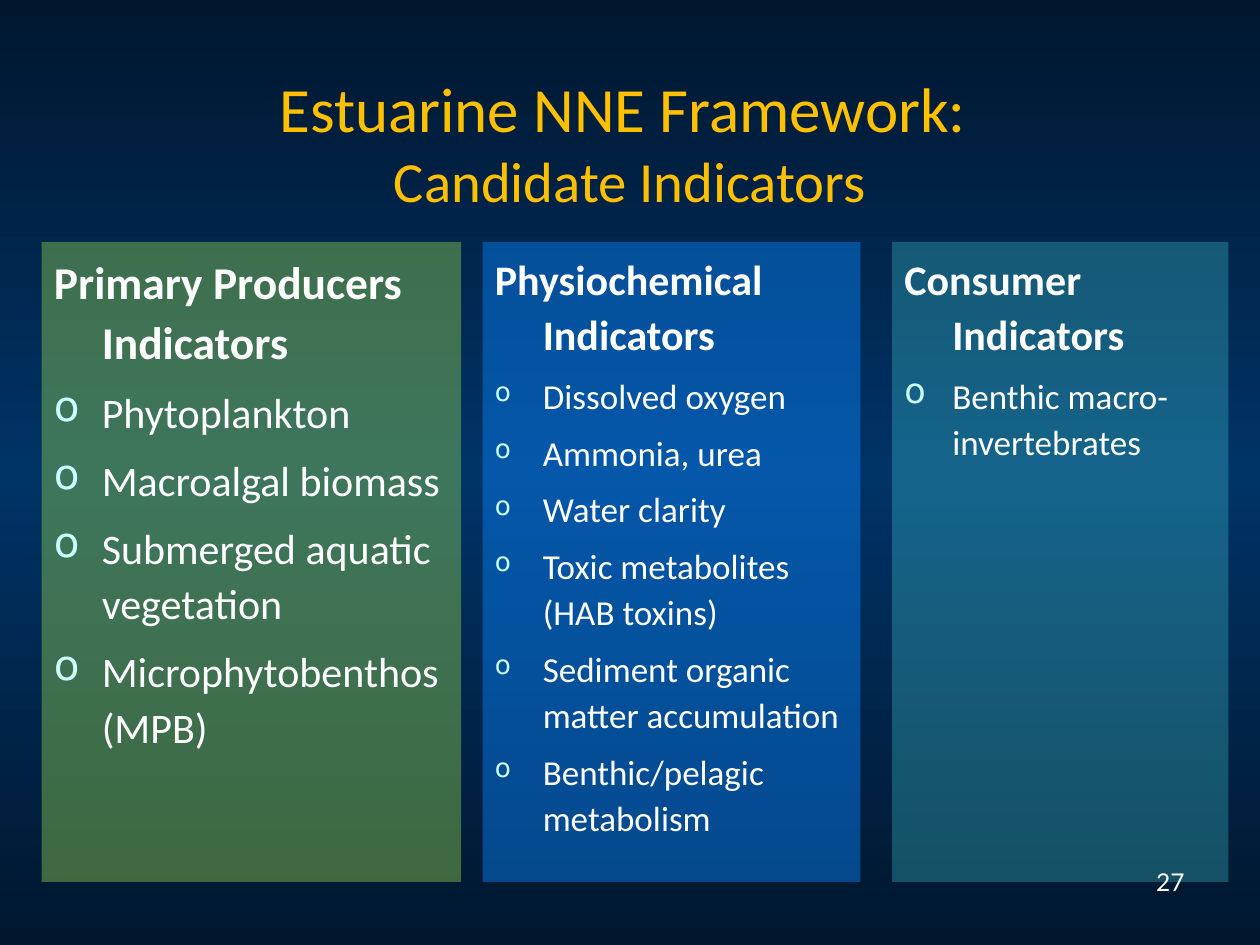
from copy import deepcopy

from lxml import etree
from pptx import Presentation, util as u
from pptx.dml.color import RGBColor
from pptx.enum import shapes, text
from pptx.oxml.ns import qn

WHITE = RGBColor(0xFF, 0xFF, 0xFF)
GOLD = RGBColor(0xFF, 0xC0, 0x00)
GREEN = RGBColor(0x92, 0xD0, 0x50)
BLUE = RGBColor(0x0A, 0x85, 0xFF)
CYAN = RGBColor(0x59, 0xFF, 0xFF)
BULLET = RGBColor(0xCC, 0xFF, 0xFF)
NIGHT = RGBColor(0x00, 0x17, 0x2E)
NAVY = RGBColor(0x00, 0x33, 0x66)


class Deck:
    """Holds the style and the current slide."""

    font = "Calibri"
    indent = u.Inches(0.38)
    top, height = u.Inches(1.92), u.Inches(5.08)

    def __init__(self, prs):
        self.s = prs.slides.add_slide(prs.slide_layouts[6])

    def background(self, edge, middle):
        fill = self.s.background.fill
        fill.gradient()
        fill.gradient_angle = 90
        stops = self.s._element.find(".//" + qn("a:gsLst"))
        stops.insert(1, deepcopy(stops[0]))
        for stop, color, pos in zip(fill.gradient_stops, (edge, middle, edge), (0, 0.5, 1)):
            stop.color.rgb = color
            stop.position = pos

    def run(self, p, words, size, color=WHITE, bold=False, font=None):
        r = p.add_run()
        r.text = words
        r.font.name = font or self.font
        r.font.size = u.Pt(size)
        r.font.bold = bold
        r.font.color.rgb = color

    def text_box(self, left, top, width, height, align, anchor):
        tf = self.s.shapes.add_textbox(*map(u.Inches, (left, top, width, height))).text_frame
        tf.word_wrap = True
        tf.vertical_anchor = anchor
        p = tf.paragraphs[0]
        p.alignment = align
        return p

    def item(self, p, words, size, bold=False, bullet_size=None):
        p.alignment = text.PP_ALIGN.LEFT
        p.line_spacing = 1.1
        p.space_before, p.space_after = u.Pt(0.2 * size), u.Pt(0.1 * size)
        pPr = p._p.get_or_add_pPr()
        pPr.set("marL", str(self.indent))
        pPr.set("indent", str(-self.indent))
        if bullet_size:
            color = etree.SubElement(pPr, qn("a:buClr"))
            etree.SubElement(color, qn("a:srgbClr"), val=str(BULLET))
            etree.SubElement(pPr, qn("a:buSzPct"), val=str(bullet_size * 1000))
            etree.SubElement(pPr, qn("a:buChar"), char="o")
        self.run(p, words, size, bold=bold)

    def panel(self, left, width, color, alpha, heading, items, sizes, bullet_size=100):
        sp = self.s.shapes.add_shape(shapes.MSO_SHAPE.RECTANGLE, u.Inches(left), self.top,
                                     u.Inches(width), self.height)
        sp.shadow.inherit = False
        sp.line.fill.background()
        sp.fill.solid()
        sp.fill.fore_color.rgb = color
        clr = sp._element.spPr.find(".//" + qn("a:srgbClr"))
        etree.SubElement(clr, qn("a:alpha"), val=str(alpha * 1000))
        tf = sp.text_frame
        tf.word_wrap = True
        tf.vertical_anchor = text.MSO_ANCHOR.TOP
        self.item(tf.paragraphs[0], heading, sizes[0], bold=True)
        for words in items:
            self.item(tf.add_paragraph(), words, sizes[1], bullet_size=bullet_size)


def main():
    prs = Presentation()
    prs.slide_width, prs.slide_height = u.Inches(10), u.Inches(7.5)
    deck = Deck(prs)
    deck.background(NIGHT, NAVY)

    # Title
    p = deck.text_box(0, 0.5, 10, 1.25, text.PP_ALIGN.CENTER, text.MSO_ANCHOR.MIDDLE)
    deck.run(p, "Estuarine NNE Framework: ", 36, GOLD)
    p.add_line_break()
    deck.run(p, "Candidate Indicators", 32.4, GOLD)

    # Indicator panels
    deck.panel(3.83, 3, BLUE, 44, "Physiochemical Indicators",
               ["Dissolved oxygen", "Ammonia, urea", "Water clarity",
                "Toxic metabolites (HAB toxins)", "Sediment organic matter accumulation",
                "Benthic/pelagic metabolism"], (24, 20), bullet_size=75)
    deck.panel(0.33, 3.33, GREEN, 43, "Primary Producers Indicators",
               ["Phytoplankton", "Macroalgal biomass", "Submerged aquatic vegetation",
                "Microphytobenthos (MPB)"], (26, 24))
    deck.panel(7.08, 2.67, CYAN, 24, "Consumer Indicators",
               ["Benthic macro-invertebrates"], (24, 20))

    # Slide number
    p = deck.text_box(7.17, 6.83, 2.33, 0.52, text.PP_ALIGN.RIGHT, text.MSO_ANCHOR.TOP)
    deck.run(p, "27", 14, font="Lato")

    prs.save("out.pptx")


if __name__ == "__main__":
    main()
